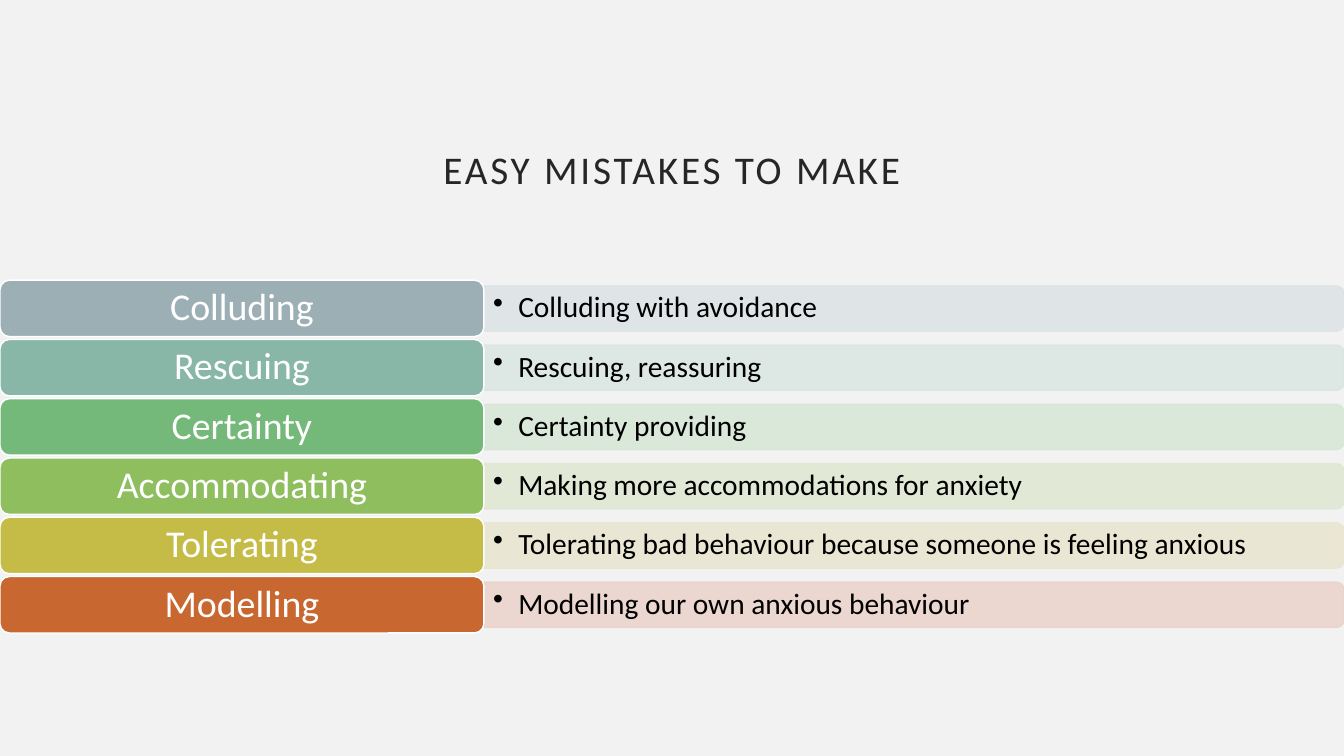
from dataclasses import dataclass

from lxml import etree
from pptx import Presentation
from pptx import util as u
from pptx.dml.color import RGBColor
from pptx.enum import shapes, text
from pptx.oxml import ns


@dataclass(frozen=True)
class Theme:
    font: str = "Calibri"
    background: str = "F2F2F2"
    title_color: str = "262626"
    label_color: str = "FFFFFF"
    detail_color: str = "000000"
    title_size: int = 28
    label_size: int = 27
    detail_size: int = 21


@dataclass(frozen=True)
class Mistake:
    label: str
    detail: str
    color: str
    tint: str


THEME = Theme()
MISTAKES = [
    Mistake("Colluding", "Colluding with avoidance", "9BAFB5", "DEE3E5"),
    Mistake("Rescuing", "Rescuing, reassuring", "88B6A7", "DBE6E2"),
    Mistake("Certainty", "Certainty providing", "74B97A", "D8E7D8"),
    Mistake("Accommodating", "Making more accommodations for anxiety", "8EBE5E", "E0E8D4"),
    Mistake("Tolerating", "Tolerating bad behaviour because someone is feeling anxious",
            "C4BC47", "EAE5D1"),
    Mistake("Modelling", "Modelling our own anxious behaviour", "C96731", "EBD3CD"),
]

# Row geometry, in inches
FIRST_TOP, LAST_TOP = 2.78, 5.72
PITCH = (LAST_TOP - FIRST_TOP) / (len(MISTAKES) - 1)
LABEL_WIDTH, LABEL_HEIGHT = 4.8, 0.56
BAR_LENGTH, BAR_HEIGHT = 8.53, 0.45
DETAIL_WIDTH, DETAIL_HEIGHT = 8.51, 0.4


def paint(shape, fill: str, line: str) -> None:
    shape.shadow.inherit = False
    shape.fill.solid()
    shape.fill.fore_color.rgb = RGBColor.from_string(fill)
    shape.line.color.rgb = RGBColor.from_string(line)
    shape.line.width = u.Pt(1)


def write(shape, words: str, size: int, color: str, align, inset: tuple[float, float]):
    """Write one middle-anchored paragraph and return it with its run."""
    frame = shape.text_frame
    frame.word_wrap = True
    frame.vertical_anchor = text.MSO_ANCHOR.MIDDLE
    frame.margin_left = frame.margin_right = u.Inches(inset[0])
    frame.margin_top = frame.margin_bottom = u.Inches(inset[1])
    para = frame.paragraphs[0]
    para.alignment = align
    para.line_spacing = 0.9
    span = para.add_run()
    span.text = words
    span.font.name = THEME.font
    span.font.size = u.Pt(size)
    span.font.color.rgb = RGBColor.from_string(color)
    return para, span


def add_bullet(para) -> None:
    props = para._p.get_or_add_pPr()
    props.set("marL", str(u.Inches(0.25)))
    props.set("indent", str(u.Inches(-0.25)))
    etree.SubElement(props, ns.qn("a:buChar")).set("char", "•")


def add_title(page) -> None:
    box = page.shapes.add_textbox(u.Inches(2.44), u.Inches(1.05), u.Inches(8.45), u.Inches(1.3))
    para, span = write(box, "EASY MISTAKES TO MAKE", THEME.title_size, THEME.title_color,
                       text.PP_ALIGN.CENTER, (0.2, 0.2))
    para.space_after = u.Pt(6)
    span.font._element.set("spc", "200")


def add_row(page, mistake: Mistake, top: float) -> None:
    middle = top + LABEL_HEIGHT / 2

    # Tinted bar, turned so that its rounded end faces right
    center = LABEL_WIDTH + BAR_LENGTH / 2
    bar = page.shapes.add_shape(
        shapes.MSO_SHAPE.ROUND_2_SAME_RECTANGLE,
        u.Inches(center - BAR_HEIGHT / 2), u.Inches(middle - BAR_LENGTH / 2),
        u.Inches(BAR_HEIGHT), u.Inches(BAR_LENGTH))
    bar.rotation = 90
    paint(bar, mistake.tint, mistake.tint)
    for color in bar._element.spPr.iter(ns.qn("a:srgbClr")):
        etree.SubElement(color, ns.qn("a:alpha")).set("val", "90000")

    # Upright text over the bar
    box = page.shapes.add_textbox(u.Inches(LABEL_WIDTH), u.Inches(middle - DETAIL_HEIGHT / 2),
                                  u.Inches(DETAIL_WIDTH), u.Inches(DETAIL_HEIGHT))
    para, _ = write(box, mistake.detail, THEME.detail_size, THEME.detail_color,
                    text.PP_ALIGN.LEFT, (0.09, 0.04))
    add_bullet(para)

    # Label
    label = page.shapes.add_shape(shapes.MSO_SHAPE.ROUNDED_RECTANGLE, 0, u.Inches(top),
                                  u.Inches(LABEL_WIDTH), u.Inches(LABEL_HEIGHT))
    paint(label, mistake.color, THEME.label_color)
    write(label, mistake.label, THEME.label_size, THEME.label_color,
          text.PP_ALIGN.CENTER, (0.11, 0.06))


def main() -> None:
    deck = Presentation()
    deck.slide_width, deck.slide_height = u.Inches(13.33), u.Inches(7.5)
    page = deck.slides.add_slide(deck.slide_layouts[6])
    page.background.fill.solid()
    page.background.fill.fore_color.rgb = RGBColor.from_string(THEME.background)

    add_title(page)
    for index, mistake in enumerate(MISTAKES):
        add_row(page, mistake, FIRST_TOP + index * PITCH)
    deck.save("out.pptx")


if __name__ == "__main__":
    main()
